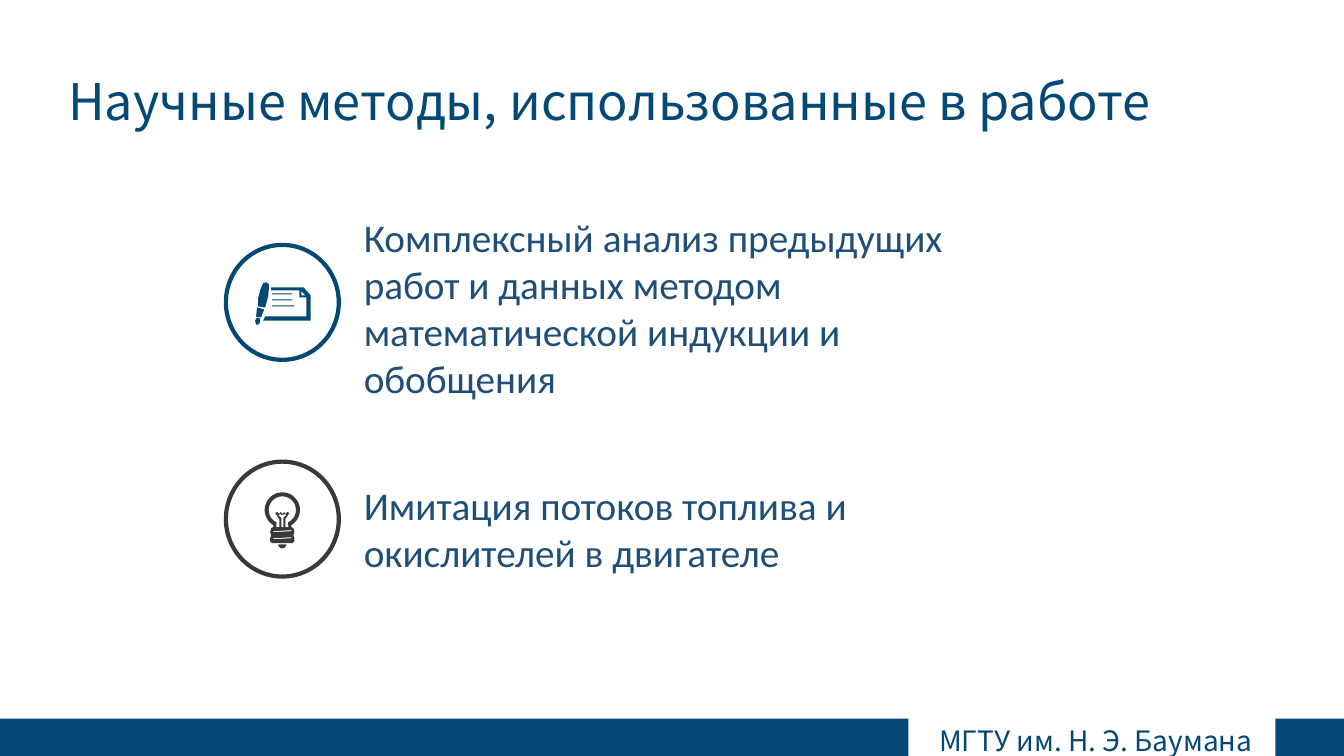
from dataclasses import dataclass
from math import cos, radians, sin

from pptx import Presentation
from pptx.dml.color import RGBColor
from pptx.enum.shapes import MSO_SHAPE as Shape
from pptx.enum.text import PP_ALIGN as Align
from pptx.util import Inches, Pt

NAVY = RGBColor(0x04, 0x48, 0x75)
STEEL = RGBColor(0x1F, 0x4E, 0x79)
GRAPHITE = RGBColor(0x3B, 0x38, 0x38)
HEADING_FONT = "Noto Sans CJK SC"
BODY_FONT = "Calibri"

PAGE_WIDTH, PAGE_HEIGHT = 13.33, 7.5
FOOTER_TOP = 7.13
ICON_CENTER_X = 2.8
RING_WIDTH, RING_HEIGHT = 1.12, 1.14
UNITS_PER_INCH = 1000

Point = tuple[float, float]
Contour = list[Point]


@dataclass(frozen=True)
class Icon:
    center_y: float
    color: RGBColor
    contours: list[Contour]


@dataclass(frozen=True)
class FooterBar:
    left: float
    right: float


def arc(center_y: float, radius: float, start: int, end: int, steps: int = 24) -> Contour:
    angles = [radians(start + (end - start) * step / steps) for step in range(steps + 1)]
    return [(radius * cos(angle), center_y + radius * sin(angle)) for angle in angles]


def mirrored(right_half: Contour) -> Contour:
    return right_half + [(-x, y) for x, y in reversed(right_half)]


def rectangle(left: float, top: float, right: float, bottom: float) -> Contour:
    return [(left, top), (right, top), (right, bottom), (left, bottom)]


def bulb_contours() -> list[Contour]:
    glass_y = -0.09
    screw_side = [(0.1, 0.24), (0.12, 0.22), (0.12, 0.19), (0.11, 0.16),
                  (0.12, 0.13), (0.11, 0.09), (0.09, 0.08)]
    filament_side = [(0, -0.05), (0.02, -0.07), (0.03, -0.05), (0.05, -0.07),
                     (0.07, -0.06), (0.03, 0), (0.03, 0.08), (0.06, 0.08)]
    stem_side = [(0.01, 0.08), (0.01, -0.01), (0.04, -0.04), (0.02, -0.05), (0, -0.04)]

    body = mirrored(screw_side + arc(glass_y, 0.35 / 2, 60, -90))
    glass_hole = mirrored(filament_side + arc(glass_y, 0.27 / 2, 65, -90))
    stem_hole = mirrored(stem_side)
    tip = arc(0.25, 0.04, 0, 180)
    grooves = [[(0.09, y), (-0.09, y + 0.01), (-0.09, y + 0.02), (0.09, y + 0.01)]
               for y in (0.11, 0.18)]
    return [body, glass_hole, stem_hole, tip, *grooves]


def pen_and_paper_contours() -> list[Contour]:
    pen_barrel = [(-0.24, 0.04), (-0.24, -0.04), (-0.22, -0.12), (-0.19, -0.19),
                  (-0.16, -0.2), (-0.13, -0.18), (-0.14, -0.06), (-0.17, 0.05)]
    pen_grip = [(-0.25, 0.05), (-0.26, 0.14), (-0.21, 0.15), (-0.18, 0.07)]
    pen_nib = [(-0.25, 0.15), (-0.22, 0.16), (-0.22, 0.2),
               (-0.24, 0.22), (-0.26, 0.22), (-0.27, 0.18)]
    paper_edge = [(-0.17, 0.14), (-0.19, 0.18), (0.28, 0.18), (0.28, -0.07),
                  (0.21, -0.15), (-0.11, -0.15), (-0.11, -0.12), (0.17, -0.12),
                  (0.17, -0.05), (0.24, -0.05), (0.24, 0.14)]
    paper_fold = [(0.23, -0.07), (0.19, -0.07), (0.19, -0.11)]
    written_lines = [rectangle(-0.1, top, right, top + 0.01)
                     for top, right in ((-0.09, 0.1), (-0.03, 0.1), (0.03, 0.12))]
    return [pen_barrel, pen_grip, pen_nib, paper_edge, paper_fold, *written_lines]


ICONS = [
    Icon(5.15, GRAPHITE, bulb_contours()),
    Icon(3, NAVY, pen_and_paper_contours()),
]
FOOTER_BARS = [FooterBar(12.65, PAGE_WIDTH), FooterBar(0, 9.01)]
METHODS = [
    "Комплексный анализ предыдущих работ и данных методом математической индукции и обобщения",
    "Имитация потоков топлива и окислителей в двигателе",
]


def add_text(page, texts: list[str], left: float, top: float, width: float, height: float,
             *, size: float, font: str = HEADING_FONT, color: RGBColor = NAVY,
             align: Align = Align.CENTER, gap: float = 0) -> None:
    box = page.shapes.add_textbox(Inches(left), Inches(top), Inches(width), Inches(height))
    frame = box.text_frame
    frame.word_wrap = True
    for index, text in enumerate(texts):
        para = frame.add_paragraph() if index else frame.paragraphs[0]
        para.alignment = align
        if index:
            para.space_before = Pt(gap)
        span = para.add_run()
        span.text = text
        span.font.size = Pt(size)
        span.font.name = font
        span.font.color.rgb = color


def paint(shape, color: RGBColor) -> None:
    shape.shadow.inherit = False
    shape.fill.solid()
    shape.fill.fore_color.rgb = color
    shape.line.fill.background()


def add_ring(page, icon: Icon) -> None:
    ring = page.shapes.add_shape(
        Shape.OVAL,
        Inches(ICON_CENTER_X - RING_WIDTH / 2), Inches(icon.center_y - RING_HEIGHT / 2),
        Inches(RING_WIDTH), Inches(RING_HEIGHT))
    ring.shadow.inherit = False
    ring.fill.background()
    ring.line.color.rgb = icon.color
    ring.line.width = Pt(3)


def add_symbol(page, icon: Icon) -> None:
    placed = [[(round((ICON_CENTER_X + x) * UNITS_PER_INCH),
                round((icon.center_y + y) * UNITS_PER_INCH)) for x, y in contour]
              for contour in icon.contours]
    builder = page.shapes.build_freeform(*placed[0][0], scale=Inches(1) / UNITS_PER_INCH)
    for index, (start, *rest) in enumerate(placed):
        if index:
            builder.move_to(*start)
        builder.add_line_segments(rest, close=True)
    paint(builder.convert_to_shape(), icon.color)


def add_footer_bar(page, bar: FooterBar) -> None:
    shape = page.shapes.add_shape(
        Shape.RECTANGLE, Inches(bar.left), Inches(FOOTER_TOP),
        Inches(bar.right - bar.left), Inches(PAGE_HEIGHT - FOOTER_TOP))
    paint(shape, NAVY)


def main() -> None:
    deck = Presentation()
    deck.slide_width = Inches(PAGE_WIDTH)
    deck.slide_height = Inches(PAGE_HEIGHT)
    page = deck.slides.add_slide(deck.slide_layouts[6])

    add_text(page, ["Научные методы, использованные в работе"],
             0.05, 0.65, 11.99, 0.71, size=36)
    add_text(page, METHODS, 3.51, 2.07, 6.54, 3.74, size=28, font=BODY_FONT,
             color=STEEL, align=Align.LEFT, gap=57)
    for icon in ICONS:
        add_ring(page, icon)
        add_symbol(page, icon)
    for bar in FOOTER_BARS:
        add_footer_bar(page, bar)
    add_text(page, ["МГТУ им. Н. Э. Баумана"], 9.09, FOOTER_TOP, 3.56, 0.44, size=20)

    deck.save("out.pptx")


if __name__ == "__main__":
    main()
